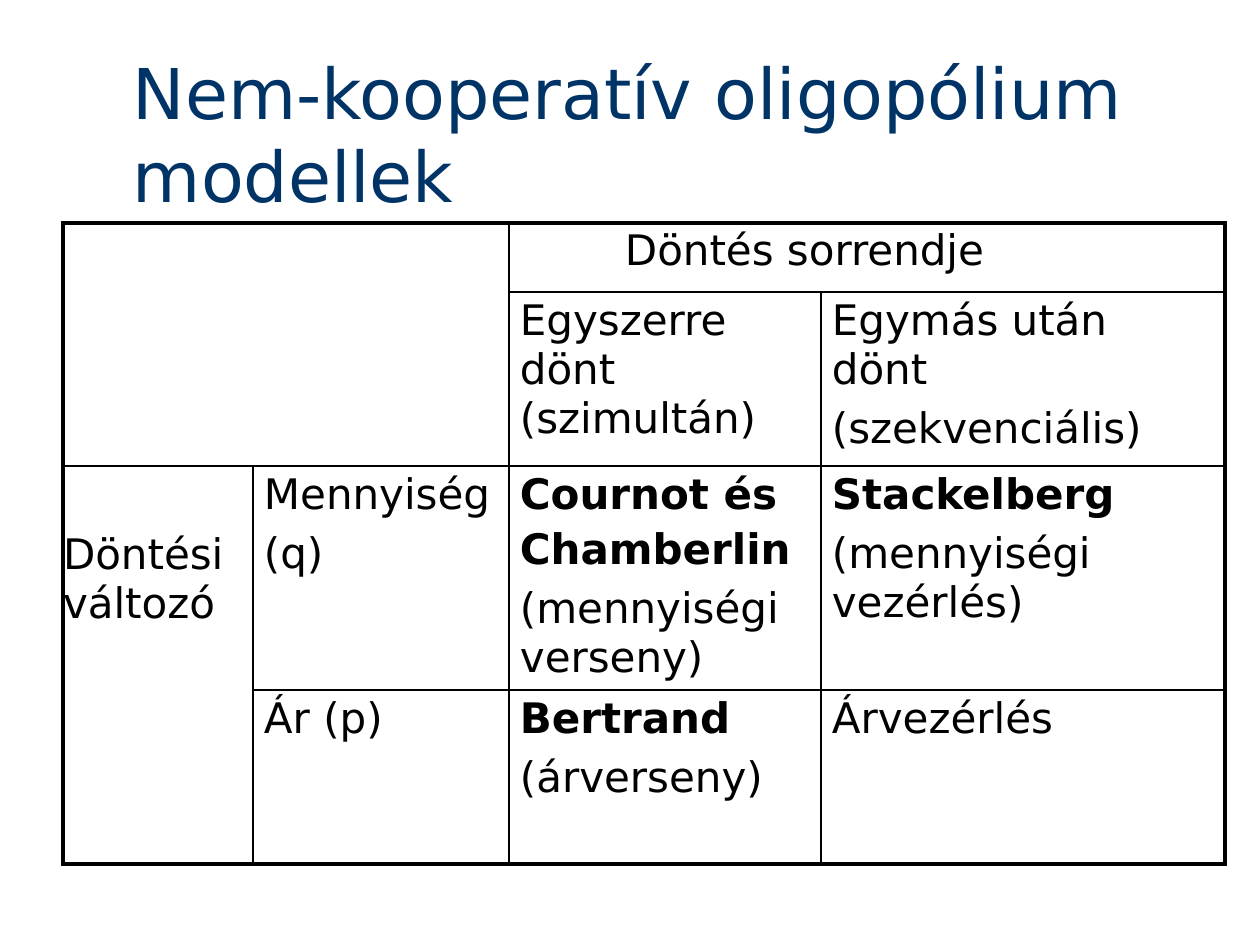
import pptx
import pptx.dml.color
import pptx.oxml
import pptx.oxml.ns
import pptx.util

PX = 914400 // 126
FONT = "DejaVu Sans"
NAVY = pptx.dml.color.RGBColor(0x00, 0x33, 0x66)
BLACK = pptx.dml.color.RGBColor(0x00, 0x00, 0x00)
INNER_LINE, OUTER_LINE = 1, 2.25

COLUMN_WIDTHS = [190, 256, 312, 404]
ROW_HEIGHTS = [69, 174, 224, 174]

# row, column, row span, column span, left margin, top margin,
# paragraphs as (text, bold, space before in points)
CELLS = [
    (0, 0, 2, 2, 0, 0, []),
    (0, 2, 1, 2, 116, 4, [("Döntés sorrendje", False, 0)]),
    (1, 2, 1, 1, 11, 5, [("Egyszerre dönt (szimultán)", False, 0)]),
    (1, 3, 1, 1, 11, 5, [("Egymás után", False, 0), ("dönt", False, 0),
                         ("(szekvenciális)", False, 5.8)]),
    (2, 0, 2, 1, 0, 65, [("Döntési változó", False, 0)]),
    (2, 1, 1, 1, 11, 5, [("Mennyiség", False, 0), ("(q)", False, 5.8)]),
    (2, 2, 1, 1, 11, 5, [("Cournot és", True, 0), ("Chamberlin", True, 3),
                         ("(mennyiségi verseny)", False, 5.8)]),
    (2, 3, 1, 1, 11, 5, [("Stackelberg", True, 0),
                         ("(mennyiségi vezérlés)", False, 5.8)]),
    (3, 1, 1, 1, 11, 5, [("Ár (p)", False, 0)]),
    (3, 2, 1, 1, 11, 5, [("Bertrand", True, 0), ("(árverseny)", False, 5.8)]),
    (3, 3, 1, 1, 11, 5, [("Árvezérlés", False, 0)]),
]


def write_paragraphs(text_frame, paragraphs, size, color):
    """Fill a text frame with (text, bold, space before) paragraphs."""
    text_frame.word_wrap = True
    for index, (text, bold, space_before) in enumerate(paragraphs):
        paragraph = text_frame.add_paragraph() if index else text_frame.paragraphs[0]
        paragraph.space_before = pptx.util.Pt(space_before)
        run = paragraph.add_run()
        run.text = text
        run.font.name = FONT
        run.font.size = pptx.util.Pt(size)
        run.font.bold = bold
        run.font.color.rgb = color


def add_border(cell, side, points):
    cell._tc.get_or_add_tcPr().append(pptx.oxml.parse_xml(
        f'<a:ln{side} {pptx.oxml.ns.nsdecls("a")} w="{int(points * 12700)}">'
        f'<a:solidFill><a:srgbClr val="{BLACK}"/></a:solidFill></a:ln{side}>'))


presentation = pptx.Presentation()
presentation.slide_width = pptx.util.Inches(10)
presentation.slide_height = pptx.util.Inches(7.5)
slide = presentation.slides.add_slide(presentation.slide_layouts[6])

title = slide.shapes.add_textbox(132 * PX, 49 * PX, 997 * PX, 170 * PX)
title_frame = title.text_frame
title_frame.margin_left = PX
title_frame.margin_top = title_frame.margin_right = title_frame.margin_bottom = 0
write_paragraphs(title_frame, [("Nem-kooperatív oligopólium", False, 0),
                               ("modellek", False, 0)], 40, NAVY)

table = slide.shapes.add_table(
    len(ROW_HEIGHTS), len(COLUMN_WIDTHS), 63 * PX, 223 * PX,
    sum(COLUMN_WIDTHS) * PX, sum(ROW_HEIGHTS) * PX).table
table.first_row = False
table.horz_banding = False
for column, width in zip(table.columns, COLUMN_WIDTHS):
    column.width = width * PX
for row, height in zip(table.rows, ROW_HEIGHTS):
    row.height = height * PX

for top, left, row_span, column_span, margin_left, margin_top, paragraphs in CELLS:
    cell = table.cell(top, left)
    bottom, right = top + row_span, left + column_span
    if row_span * column_span > 1:
        cell.merge(table.cell(bottom - 1, right - 1))
    cell.margin_left = margin_left * PX
    cell.margin_top = margin_top * PX
    cell.margin_right = cell.margin_bottom = 0
    for side, is_outer in (("L", left == 0), ("R", right == len(COLUMN_WIDTHS)),
                           ("T", top == 0), ("B", bottom == len(ROW_HEIGHTS))):
        add_border(cell, side, OUTER_LINE if is_outer else INNER_LINE)
    write_paragraphs(cell.text_frame, paragraphs, 24, BLACK)

for cell in table.iter_cells():
    cell.fill.background()

presentation.save("out.pptx")
